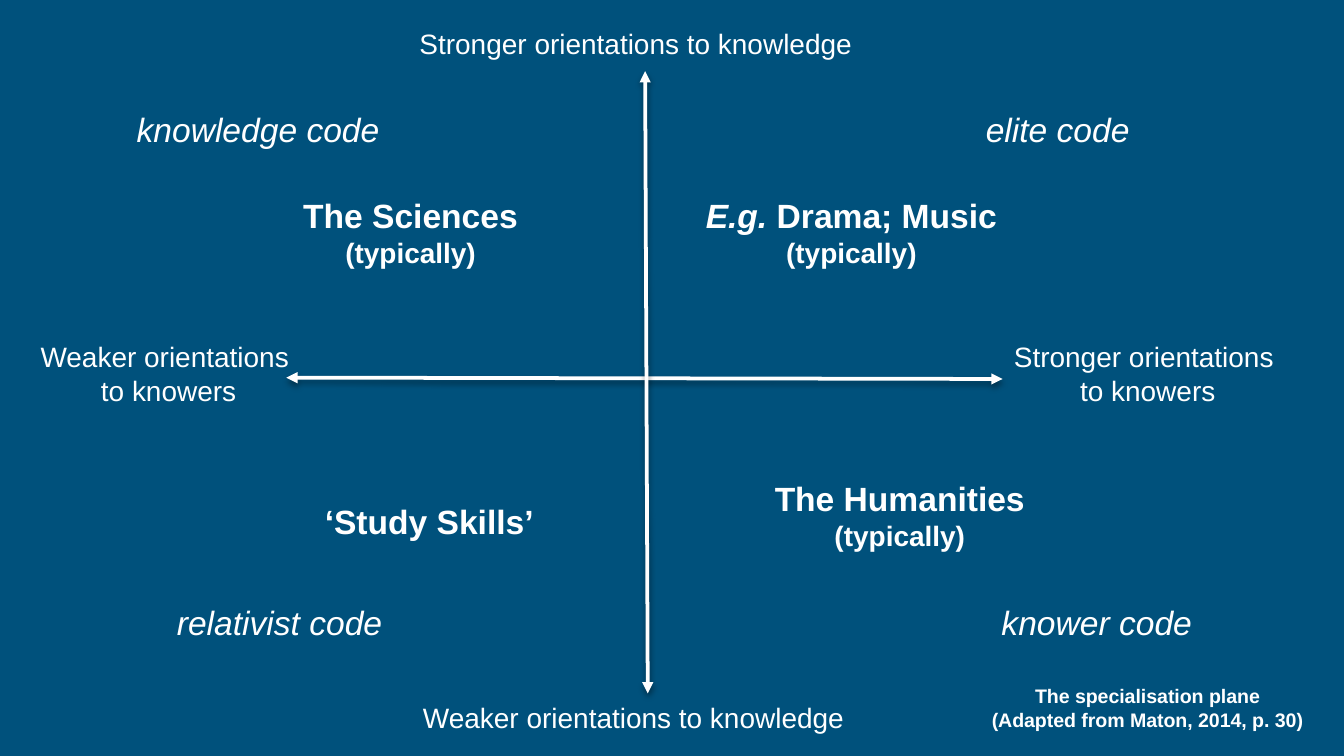
from lxml.etree import SubElement
from pptx import Presentation
from pptx.dml.color import RGBColor
from pptx.enum.shapes import MSO_CONNECTOR
from pptx.enum.text import MSO_ANCHOR, PP_ALIGN
from pptx.oxml.ns import qn
from pptx.util import Inches, Pt

BLUE, WHITE, BLACK = "00517C", "FFFFFF", "000000"
FONT = "Arial"
CODE_SIZE, AXIS_SIZE, CAPTION_SIZE = 18, 15, 10.5
BLANK_LAYOUT = 6

# Start x, start y, end x, end y in inches
AXES = [(2.13, 2.81, 7.46, 2.82), (4.80, 0.53, 4.82, 5.16)]

# Text, then left, top, width, height in inches
CODES = [
    ("knowledge code", (0.32, 0.76, 3.20, 0.40)),
    ("elite code", (6.64, 0.76, 2.46, 0.40)),
    ("relativist code", (0.64, 4.43, 2.88, 0.40)),
    ("knower code", (6.75, 4.43, 2.82, 0.40)),
]
KNOWLEDGE_LABELS = [
    ("Stronger orientations to knowledge", (2.98, 0.15, 3.46, 0.35)),
    ("Weaker orientations to knowledge", (3.00, 5.16, 3.38, 0.35)),
]
KNOWER_LABELS = [
    (("Weaker orientations ", "to knowers"), (0.19, 2.48, 2.13, 0.61)),
    (("Stronger orientations ", "to knowers"), (7.43, 2.48, 2.22, 0.61)),
]
# Italic lead-in, subject, qualifier, box
SUBJECTS = [
    ("", "The Sciences", "(typically)", (1.25, 1.40, 3.61, 0.66)),
    ("E.g. ", "Drama; Music", "(typically)", (4.98, 1.40, 2.71, 0.66)),
    ("", "‘Study Skills’", "", (2.31, 3.68, 1.77, 0.40)),
    ("", "The Humanities", "(typically)", (5.34, 3.51, 2.71, 0.66)),
]
CAPTION = (("The specialisation plane ", "(Adapted from Maton, 2014, p. 30) "),
           (7.26, 5.04, 2.60, 0.45))


def color(hex_code):
    return RGBColor.from_string(hex_code)


def add_axis(slide, ends):
    """Draw a double-headed arrow with a soft shadow below it."""
    axis = slide.shapes.add_connector(MSO_CONNECTOR.STRAIGHT, *map(Inches, ends))
    axis.line.color.rgb = color(WHITE)
    axis.line.width = Pt(2)
    properties = axis._element.spPr
    line = properties.find(qn("a:ln"))
    for end in ("a:headEnd", "a:tailEnd"):
        SubElement(line, qn(end), type="triangle")
    effects = SubElement(properties, qn("a:effectLst"))
    shadow = SubElement(effects, qn("a:outerShdw"), blurRad=str(Pt(3.1)),
                        dist=str(Pt(1.6)), dir="5400000", rotWithShape="0")
    shade = SubElement(shadow, qn("a:srgbClr"), val=BLACK)
    SubElement(shade, qn("a:alpha"), val="38000")


def add_label(slide, lines, box, wrap=True, align=PP_ALIGN.CENTER):
    """Add a text box; each line is (runs, size, bold), each run (text, italic)."""
    frame = slide.shapes.add_textbox(*map(Inches, box)).text_frame
    frame.word_wrap = wrap
    frame.vertical_anchor = MSO_ANCHOR.TOP
    for index, (runs, size, bold) in enumerate(lines):
        paragraph = frame.add_paragraph() if index else frame.paragraphs[0]
        paragraph.alignment = align
        font = paragraph.font
        font.name, font.size, font.bold = FONT, Pt(size), bold
        font.color.rgb = color(WHITE)
        for text, italic in runs:
            run = paragraph.add_run()
            run.text = text
            run.font.italic = italic


def plain_lines(texts, size, bold=False):
    return [([(text, False)], size, bold) for text in texts]


def main():
    presentation = Presentation()
    presentation.slide_width = Inches(10)
    presentation.slide_height = Inches(5.625)
    slide = presentation.slides.add_slide(presentation.slide_layouts[BLANK_LAYOUT])
    slide.background.fill.solid()
    slide.background.fill.fore_color.rgb = color(BLUE)

    for ends in AXES:
        add_axis(slide, ends)
    for text, box in CODES:
        add_label(slide, [([(text, True)], CODE_SIZE, False)], box)
    for text, box in KNOWLEDGE_LABELS:
        add_label(slide, plain_lines([text], AXIS_SIZE), box, False, PP_ALIGN.RIGHT)
    for texts, box in KNOWER_LABELS:
        add_label(slide, plain_lines(texts, AXIS_SIZE), box, False)
    for lead, subject, qualifier, box in SUBJECTS:
        runs = [(lead, True)] if lead else []
        lines = [(runs + [(subject, False)], CODE_SIZE, True)]
        if qualifier:
            lines += plain_lines([qualifier], AXIS_SIZE, True)
        add_label(slide, lines, box)
    texts, box = CAPTION
    add_label(slide, plain_lines(texts, CAPTION_SIZE, True), box, False)

    presentation.save("out.pptx")


if __name__ == "__main__":
    main()
